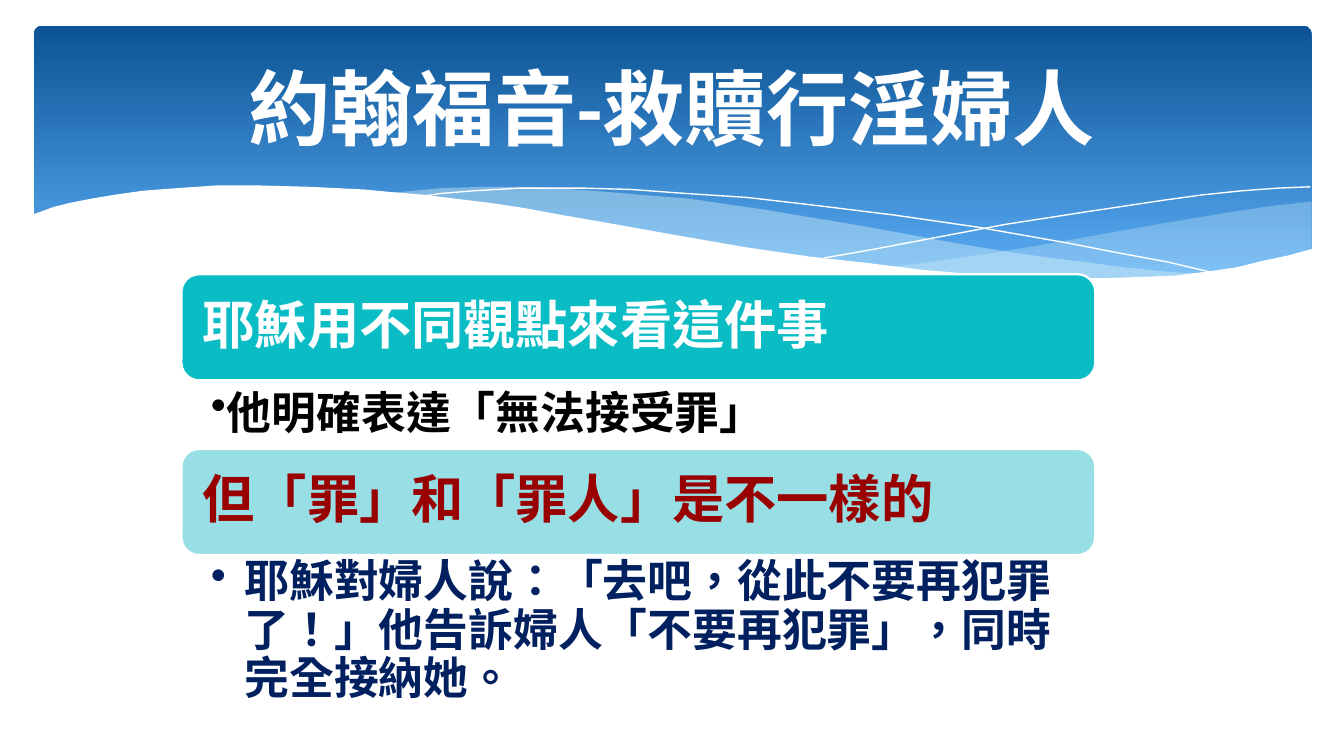
import pptx
import pptx.util
import pptx.dml.color
import pptx.enum.shapes
import pptx.enum.text
import pptx.oxml
import pptx.oxml.ns

Inches = pptx.util.Inches
Pt = pptx.util.Pt
RGBColor = pptx.dml.color.RGBColor
Anchor = pptx.enum.text.MSO_ANCHOR
Align = pptx.enum.text.PP_ALIGN
ROUNDED = pptx.enum.shapes.MSO_SHAPE.ROUNDED_RECTANGLE

WHITE = RGBColor(0xFF, 0xFF, 0xFF)
BLACK = RGBColor(0, 0, 0)
NAVY = RGBColor(0x00, 0x20, 0x60)
DARK_RED = RGBColor(0x99, 0, 0)
DEEP_BLUE = RGBColor(0x0B, 0x53, 0x94)
SKY_BLUE = RGBColor(0x59, 0xAA, 0xF2)
PALE_AQUA = RGBColor(0xDB, 0xF5, 0xF9)
TEAL = RGBColor(0x0A, 0xBD, 0xC5)
LIGHT_TEAL = RGBColor(0x97, 0xDF, 0xE5)

TITLE = "約翰福音-救贖行淫婦人"
SECTIONS = [
    dict(heading="耶穌用不同觀點來看這件事", fill=TEAL, heading_color=WHITE,
         detail="他明確表達「無法接受罪」", detail_color=BLACK,
         height=0.51, hang=0, spacing=None),
    dict(heading="但「罪」和「罪人」是不一樣的", fill=LIGHT_TEAL, heading_color=DARK_RED,
         detail="耶穌對婦人說：「去吧，從此不要再犯罪了！」他告訴婦人「不要再犯罪」，同時完全接納她。",
         detail_color=NAVY, height=1.27, hang=0.25, spacing=0.9),
]
LEFT, TOP, WIDTH, CARD_HEIGHT = 1.35, 2.04, 6.8, 0.79

RIGHT_WAVE = [
    (9.76, 1.5), (9.48, 1.53), (9.21, 1.57), (8.91, 1.62), (8.61, 1.67), (8.05, 1.77),
    (7.53, 1.86), (7.06, 1.93), (6.61, 1.99), (6.91, 2.02), (7.19, 2.04), (7.45, 2.06),
    (7.81, 2.08), (8.35, 2.08), (8.72, 2.06), (8.97, 2.03), (9.21, 1.99), (9.42, 1.94),
    (9.63, 1.89), (9.76, 1.85)]
MIDDLE_WAVE = [
    (8.93, 2.04), (8.66, 2.02), (8.37, 1.99), (8.07, 1.95), (7.75, 1.91), (7.41, 1.86),
    (7.06, 1.8), (6.68, 1.73), (6.29, 1.66), (5.98, 1.61), (5.69, 1.56), (5.41, 1.52),
    (5.14, 1.48), (4.89, 1.46), (4.42, 1.42), (3.99, 1.39), (3.61, 1.39), (3.28, 1.4),
    (2.86, 1.44), (3.23, 1.47), (3.62, 1.52), (4.04, 1.58), (4.49, 1.66), (4.91, 1.74),
    (5.3, 1.8), (5.66, 1.86), (6.01, 1.91), (6.34, 1.96), (6.65, 2), (6.95, 2.03),
    (7.22, 2.05), (7.48, 2.07), (7.73, 2.08), (7.96, 2.09), (8.28, 2.09), (8.57, 2.08)]
FALLING_LINE = [
    (3.09, 1.47), (3.28, 1.44), (3.53, 1.42), (3.87, 1.4), (4.33, 1.4), (4.69, 1.41),
    (5.1, 1.44), (5.56, 1.47), (6.08, 1.53), (6.65, 1.6), (7.27, 1.69), (7.95, 1.81),
    (8.31, 1.88), (8.69, 1.95), (9.07, 2.04)]
RISING_LINE = [
    (6.13, 1.92), (6.53, 1.85), (6.95, 1.77), (7.48, 1.67), (8.06, 1.58), (8.66, 1.49),
    (8.95, 1.45), (9.24, 1.42), (9.51, 1.4), (9.75, 1.39)]
WHITE_WAVE = [
    (9.77, 1.85), (9.59, 1.9), (9.4, 1.94), (9.2, 1.99), (8.99, 2.02), (8.75, 2.05),
    (8.5, 2.06), (8.23, 2.07), (7.93, 2.07), (7.61, 2.06), (7.26, 2.04), (6.88, 2.01),
    (6.48, 1.96), (6.03, 1.91), (5.55, 1.84), (5.03, 1.75), (4.47, 1.65), (4.18, 1.6),
    (3.91, 1.55), (3.65, 1.51), (3.4, 1.48), (3.16, 1.45), (2.92, 1.43), (2.71, 1.41),
    (2.3, 1.39), (1.93, 1.38), (1.61, 1.38), (1.32, 1.4), (1.06, 1.42), (0.85, 1.45),
    (0.67, 1.48), (0.52, 1.51), (0.4, 1.54), (0.29, 1.58), (0.23, 1.6), (0.23, 2.47),
    (9.77, 2.47)]
WAVES = [
    dict(points=RIGHT_WAVE, fill=PALE_AQUA, opacity=29),
    dict(points=MIDDLE_WAVE, fill=PALE_AQUA, opacity=40),
    dict(points=FALLING_LINE, line=WHITE),
    dict(points=RISING_LINE, line=WHITE),
    dict(points=WHITE_WAVE, fill=WHITE),
]


def write(box, text, *, size, color, insets=(0.1, 0.05, 0.1, 0.05), align=Align.LEFT,
          anchor=Anchor.TOP, spacing=None, bullet=False, hang=0):
    frame = box.text_frame
    frame.word_wrap = True
    frame.vertical_anchor = anchor
    frame.margin_left, frame.margin_top, frame.margin_right, frame.margin_bottom = map(Inches, insets)
    para = frame.paragraphs[0]
    para.alignment = align
    if spacing:
        para.line_spacing = spacing
    if bullet:
        para.level = 1
        properties = para._p.get_or_add_pPr()
        properties.set("marL", str(Inches(hang)))
        properties.set("indent", str(-Inches(hang)))
        mark = pptx.oxml.ns.qn("a:buChar")
        properties.append(properties.makeelement(mark, {"char": "•"}))
    span = para.add_run()
    span.text = text
    span.font.name = "Calibri"
    span.font.size = Pt(size)
    span.font.bold = True
    span.font.color.rgb = color
    span._r.get_or_add_rPr().set("lang", "zh-TW")


def add_wave(page, points, fill=None, opacity=100, line=None):
    corners = [(Inches(x), Inches(y)) for x, y in points]
    builder = page.shapes.build_freeform(*corners[0])
    builder.add_line_segments(corners[1:], close=fill is not None)
    wave = builder.convert_to_shape()
    wave.shadow.inherit = False
    if fill is None:
        wave.fill.background()
        wave.line.color.rgb = line
        wave.line.width = Pt(0)
        return
    wave.line.fill.background()
    wave.fill.solid()
    wave.fill.fore_color.rgb = fill
    if opacity < 100:
        color = wave.element.spPr.find(".//" + pptx.oxml.ns.qn("a:srgbClr"))
        alpha = pptx.oxml.ns.qn("a:alpha")
        color.append(color.makeelement(alpha, {"val": str(opacity * 1000)}))


def add_banner(page):
    banner = page.shapes.add_shape(ROUNDED, *map(Inches, (0.25, 0.19, 9.51, 2.02)))
    banner.adjustments[0] = 0.03
    banner.shadow.inherit = False
    banner.line.fill.background()
    banner.fill.gradient()
    banner.fill.gradient_angle = 270
    for stop, color, position in zip(banner.fill.gradient_stops, (DEEP_BLUE, SKY_BLUE), (0, 0.9)):
        stop.color.rgb = color
        stop.position = position


def add_section(page, top, section):
    card = page.shapes.add_shape(ROUNDED, *map(Inches, (LEFT, top, WIDTH, CARD_HEIGHT)))
    card.shadow.inherit = False
    card.fill.solid()
    card.fill.fore_color.rgb = section["fill"]
    card.line.color.rgb = WHITE
    card.line.width = Pt(1.25)
    write(card, section["heading"], size=28, color=section["heading_color"],
          insets=(0.12,) * 4, anchor=Anchor.MIDDLE, spacing=0.9)
    top += CARD_HEIGHT
    detail = page.shapes.add_textbox(*map(Inches, (LEFT, top, WIDTH, section["height"])))
    write(detail, section["detail"], size=24, color=section["detail_color"],
          insets=(0.22, 0.03, 0.19, 0.03), spacing=section["spacing"],
          bullet=True, hang=section["hang"])
    return top + section["height"]


def main():
    deck = pptx.Presentation()
    deck.slide_width = Inches(10)
    deck.slide_height = deck.slide_width * 9 // 16
    page = deck.slides.add_slide(deck.slide_layouts[5])
    add_banner(page)
    for wave in WAVES:
        add_wave(page, **wave)
    top = TOP
    for section in SECTIONS:
        top = add_section(page, top, section)
    title = page.shapes.title
    title.left, title.top, title.width, title.height = map(Inches, (0.5, 0.28, 9, 1.03))
    write(title, TITLE, size=44, color=WHITE, align=Align.CENTER, anchor=Anchor.MIDDLE)
    title.element.getparent().append(title.element)
    deck.save("out.pptx")


if __name__ == "__main__":
    main()
